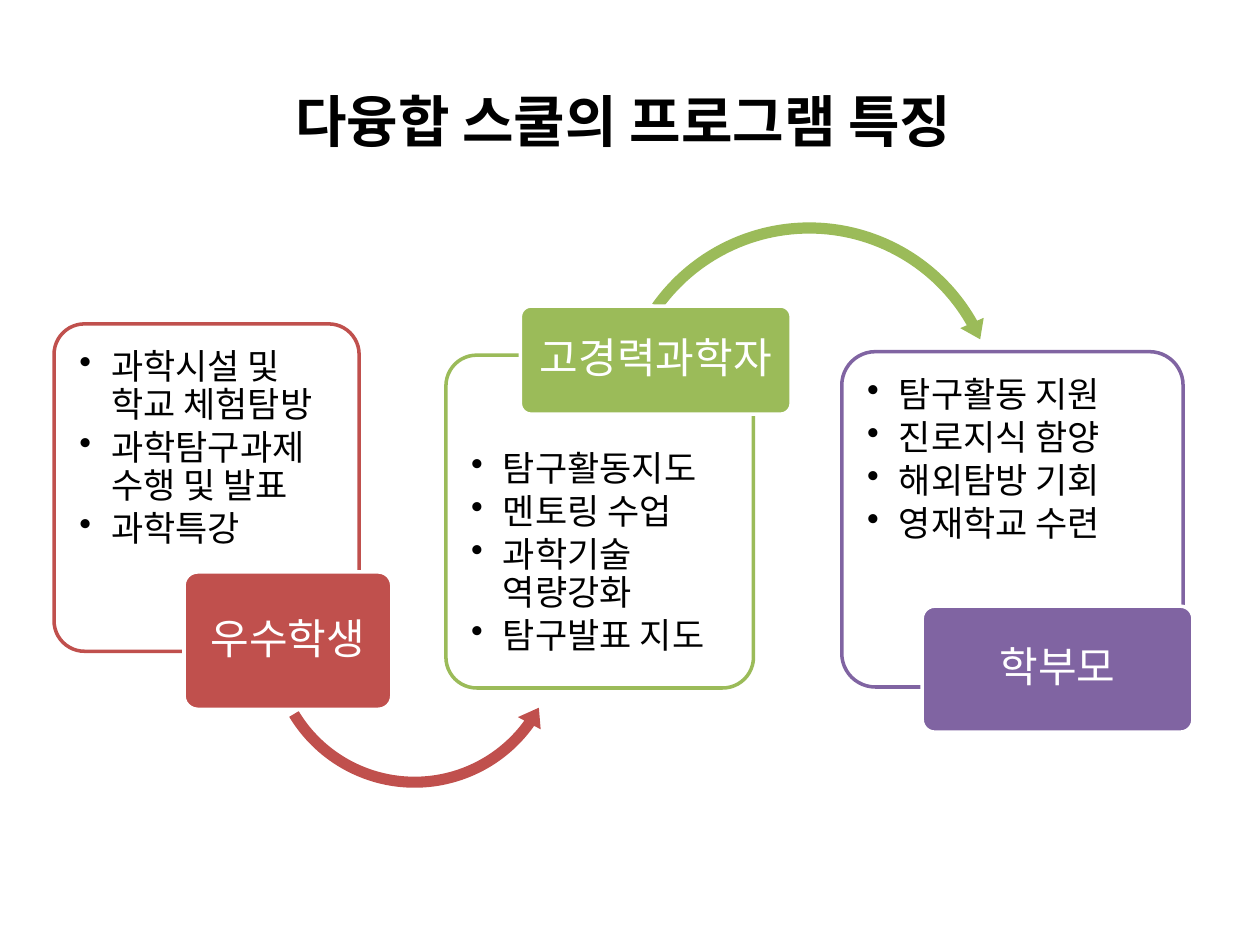
import pptx
import pptx.util
import pptx.dml.color
import pptx.enum.shapes
import pptx.enum.text
import pptx.oxml.ns
from lxml import etree

Cm, Pt = pptx.util.Cm, pptx.util.Pt
RGBColor = pptx.dml.color.RGBColor
SHAPE = pptx.enum.shapes.MSO_SHAPE
ANCHOR = pptx.enum.text.MSO_ANCHOR
ALIGN = pptx.enum.text.PP_ALIGN
qn = pptx.oxml.ns.qn

FONT = "Noto Sans CJK KR"
BLACK = RGBColor(0x00, 0x00, 0x00)
WHITE = RGBColor(0xFF, 0xFF, 0xFF)
RED = RGBColor(0xC0, 0x50, 0x4D)
GREEN = RGBColor(0x9B, 0xBB, 0x59)
PURPLE = RGBColor(0x80, 0x64, 0xA2)

# Content; boxes are left, top, width, height in centimetres
TITLE = "다융합 스쿨의 프로그램 특징 "
TITLE_BOX = (1.27, 1.32, 22.86, 2.21)
STAGES = [
    {
        "label": "우수학생", "color": RED,
        "items": ["과학시설 및 학교 체험탐방", "과학탐구과제 수행 및 발표", "과학특강"],
        "panel": (1.09, 6.53, 6.15, 6.6), "tag": (3.71, 11.53, 4.19, 2.77),
        "arrow": (SHAPE.LEFT_CIRCULAR_ARROW, (5.26, 9.83, 6.2, 6.2),
                  (0.036, 4.443, 21.321, 89.368, 0.042)),
    },
    {
        "label": "고경력과학자", "color": GREEN,
        "items": ["탐구활동지도", "멘토링 수업", "과학기술 역량강화", "탐구발표 지도"],
        "panel": (8.99, 7.16, 6.2, 6.71), "tag": (10.49, 6.17, 5.46, 2.18),
        "arrow": (SHAPE.CIRCULAR_ARROW, (12.29, 4.34, 8.05, 8.05),
                  (0.028, 3.357, 198.328, 129.195, 0.032)),
    },
    {
        "label": "학부모", "color": PURPLE,
        "items": ["탐구활동 지원", "진로지식 함양", "해외탐방 기회", "영재학교 수련"],
        "panel": (16.97, 7.09, 6.88, 6.76), "tag": (18.59, 12.22, 5.46, 2.54),
        "arrow": None,
    },
]
PANEL_INSET = 0.15
TAG_INSET = 0.07
TAG_ZONE = 1.58  # height of a panel kept free beside its tag


def inset(box, gap):
    left, top, width, height = box
    return left + gap, top + gap, width - 2 * gap, height - 2 * gap


def list_box(panel, tag):
    """Area of the panel left free by its tag at the top or bottom."""
    left, top, width, height = inset(panel, PANEL_INSET)
    if tag[1] < panel[1]:
        top += TAG_ZONE - PANEL_INSET
    return left, top, width, height - TAG_ZONE + PANEL_INSET


def add_shape(slide, kind, box, fill, line=None, adjustments=()):
    shape = slide.shapes.add_shape(kind, *map(Cm, box))
    shape.shadow.inherit = False
    for index, value in enumerate(adjustments):
        shape.adjustments[index] = value
    shape.fill.solid()
    shape.fill.fore_color.rgb = fill
    if line is None:
        shape.line.fill.background()
    else:
        shape.line.color.rgb = line
        shape.line.width = Pt(2)
    return shape


def add_text(slide, box, lines, size, color, margins, anchor, bold=False):
    text_frame = slide.shapes.add_textbox(*map(Cm, box)).text_frame
    text_frame.word_wrap = True
    text_frame.vertical_anchor = anchor
    text_frame.margin_left = text_frame.margin_right = Cm(margins[0])
    text_frame.margin_top = text_frame.margin_bottom = Cm(margins[1])
    text_frame.text = "\n".join(lines)
    for paragraph in text_frame.paragraphs:
        for run in paragraph.runs:
            run.font.size = Pt(size)
            run.font.bold = bold
            run.font.color.rgb = color
            run.font.name = FONT
            etree.SubElement(run.font._element, qn("a:ea")).set("typeface", FONT)
    return text_frame.paragraphs


def add_bullet(paragraph):
    paragraph.level = 1
    properties = paragraph._p.get_or_add_pPr()
    properties.set("marL", str(Cm(0.64)))
    properties.set("indent", str(-Cm(0.64)))
    etree.SubElement(properties, qn("a:buChar")).set("char", "•")
    paragraph.line_spacing = 0.9
    paragraph.space_after = Pt(3)


def add_stage(slide, stage):
    color, panel, tag = stage["color"], stage["panel"], stage["tag"]

    # Outlined panel with its list
    shape = add_shape(slide, SHAPE.ROUNDED_RECTANGLE, panel, WHITE, color, [0.1])
    fill_color = shape.fill._xPr.find(qn("a:solidFill"))[0]
    etree.SubElement(fill_color, qn("a:alpha")).set("val", "90000")
    for paragraph in add_text(slide, list_box(panel, tag), stage["items"], 20,
                              BLACK, (0.36, 0.36), ANCHOR.TOP):
        add_bullet(paragraph)

    # Arrow to the next stage
    if stage["arrow"]:
        kind, box, adjustments = stage["arrow"]
        add_shape(slide, kind, box, color, adjustments=adjustments)

    # Filled tag with its label
    add_shape(slide, SHAPE.ROUNDED_RECTANGLE, tag, color, WHITE, [0.1])
    label = add_text(slide, inset(tag, TAG_INSET), [stage["label"]], 24,
                     WHITE, (0.13, 0.08), ANCHOR.MIDDLE)[0]
    label.alignment = ALIGN.CENTER
    label.line_spacing = 0.9
    label.space_after = Pt(8.4)


def main():
    presentation = pptx.Presentation()
    presentation.slide_width, presentation.slide_height = Cm(25.4), Cm(19.05)
    slide = presentation.slides.add_slide(presentation.slide_layouts[6])

    title = add_text(slide, TITLE_BOX, [TITLE], 32, BLACK, (0.25, 0.13),
                     ANCHOR.MIDDLE, bold=True)[0]
    title.alignment = ALIGN.CENTER
    for stage in STAGES:
        add_stage(slide, stage)

    presentation.save("out.pptx")


if __name__ == "__main__":
    main()
